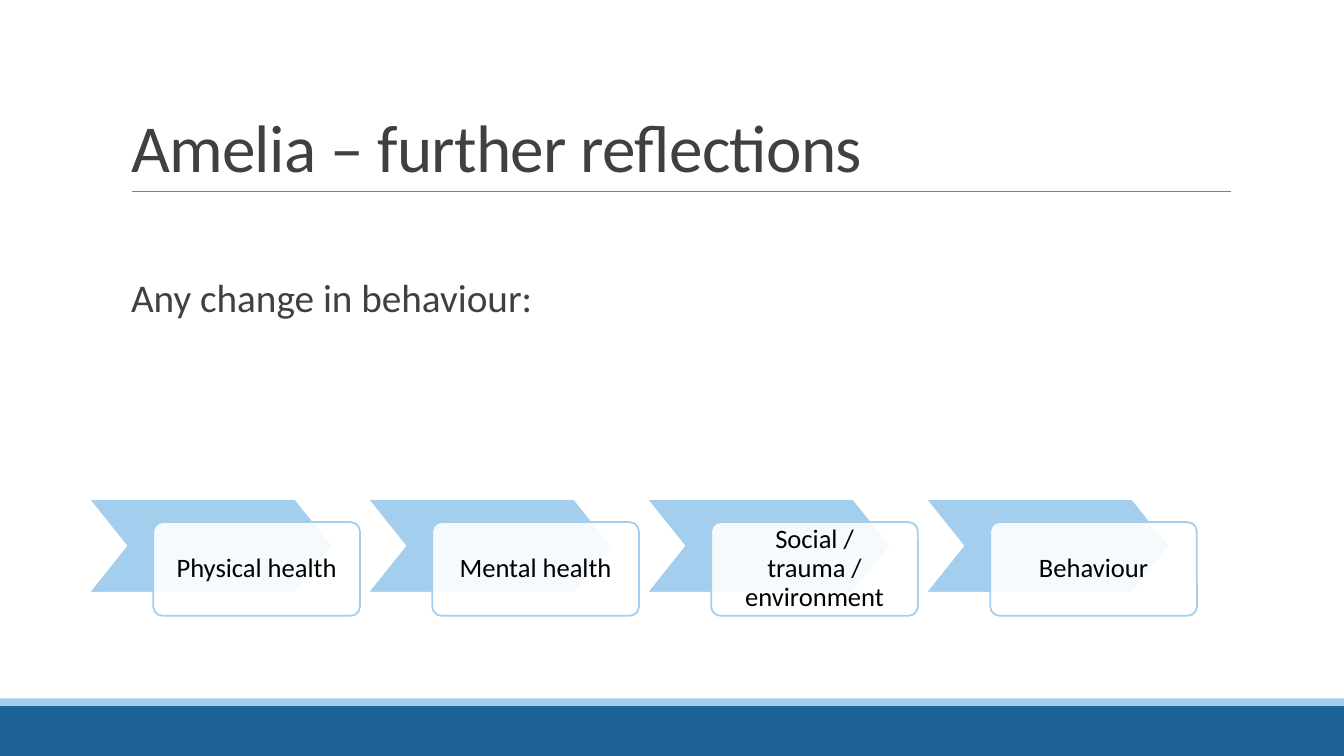
import pptx
import pptx.util
import pptx.oxml.ns
from lxml import etree
from pptx.dml.color import RGBColor
from pptx.enum.shapes import MSO_CONNECTOR, MSO_SHAPE
from pptx.enum.text import MSO_ANCHOR, MSO_AUTO_SIZE, PP_ALIGN

Inches = pptx.util.Inches
Pt = pptx.util.Pt
qn = pptx.oxml.ns.qn

COLOURS = {
    "text": "404040",
    "label": "000000",
    "rule": "808080",
    "white": "FFFFFF",
    "light": "A3CEED",
    "dark": "1C6294",
}
TOPICS = [
    "Physical health",
    "Mental health",
    "Social / trauma / environment",
    "Behaviour",
]


def colour(name):
    """Return the named colour of the palette."""
    return RGBColor.from_string(COLOURS[name])


def write_text(shape, text, size, ink="text", font="Calibri", align=PP_ALIGN.LEFT,
               anchor=MSO_ANCHOR.TOP, insets=(0.1, 0.05), line_spacing=0.9,
               space_after=0, indent=0, tracking=0):
    """Write one formatted paragraph into a shape."""
    frame = shape.text_frame
    frame.word_wrap = True
    frame.auto_size = MSO_AUTO_SIZE.NONE
    frame.vertical_anchor = anchor
    frame.margin_left = frame.margin_right = Inches(insets[0])
    frame.margin_top = frame.margin_bottom = Inches(insets[1])
    paragraph = frame.paragraphs[0]
    properties = paragraph._p.get_or_add_pPr()
    properties.set("marL", str(Inches(indent)))
    properties.set("indent", "0")
    etree.SubElement(properties, qn("a:buNone"))
    paragraph.alignment = align
    paragraph.line_spacing = line_spacing
    paragraph.space_before = Pt(0)
    paragraph.space_after = Pt(space_after)
    run = paragraph.add_run()
    run.text = text
    run.font.name = font
    run.font.size = Pt(size)
    run.font.color.rgb = colour(ink)
    if tracking:
        run._r.get_or_add_rPr().set("spc", str(int(tracking * 100)))


class SlideBuilder:
    """Holds the current slide and draws its elements in one style."""

    def __init__(self, presentation):
        """Add a title and content slide."""
        self.slide = presentation.slides.add_slide(presentation.slide_layouts[1])

    def placeholder(self, index, box, text, **style):
        """Move and fill a template placeholder."""
        shape = self.slide.placeholders[index]
        shape.left, shape.top, shape.width, shape.height = map(Inches, box)
        write_text(shape, text, **style)

    def shape(self, kind, box, fill, line=None, adjustment=None, opacity=None):
        """Draw a filled preset shape."""
        shape = self.slide.shapes.add_shape(kind, *map(Inches, box))
        shape.shadow.inherit = False
        shape.fill.solid()
        shape.fill.fore_color.rgb = colour(fill)
        if line:
            shape.line.color.rgb = colour(line)
            shape.line.width = Pt(1.25)
        else:
            shape.line.fill.background()
        if adjustment is not None:
            shape.adjustments[0] = adjustment
        if opacity is not None:
            solid = shape._element.spPr.find(qn("a:solidFill"))
            etree.SubElement(solid[0], qn("a:alpha")).set("val", str(opacity * 1000))
        return shape

    def rule(self, left, right, top):
        """Draw a thin horizontal line."""
        line = self.slide.shapes.add_connector(
            MSO_CONNECTOR.STRAIGHT, Inches(left), Inches(top), Inches(right), Inches(top))
        line.line.color.rgb = colour("rule")
        line.line.width = Pt(0.5)
        etree.SubElement(line._element.spPr, qn("a:effectLst"))

    def step(self, left, top, label):
        """Draw a chevron with its overlapping label card."""
        self.shape(MSO_SHAPE.CHEVRON, (left, top, 2.42, 0.93), "light", "white", 0.4)
        card = self.shape(MSO_SHAPE.ROUNDED_RECTANGLE, (left + 0.64, top + 0.23, 2.05, 0.93),
                          "white", "light", 0.1, opacity=90)
        write_text(card, label, 19, "label", align=PP_ALIGN.CENTER,
                   anchor=MSO_ANCHOR.MIDDLE, insets=(0.15, 0))


def main():
    """Build and save the slide."""
    presentation = pptx.Presentation()
    presentation.slide_width = Inches(13.33)
    presentation.slide_height = Inches(7.5)
    builder = SlideBuilder(presentation)
    builder.shape(MSO_SHAPE.RECTANGLE, (0, 7, 13.33, 0.5), "dark")
    builder.shape(MSO_SHAPE.RECTANGLE, (0, 6.93, 13.33, 0.07), "light")
    builder.rule(1.31, 12.21, 1.9)
    builder.placeholder(0, (1.2, 0.31, 11, 1.59), "Amelia – further reflections", size=48,
                        anchor=MSO_ANCHOR.BOTTOM, line_spacing=0.85, tracking=-0.5)
    builder.placeholder(1, (1.2, 2.71, 10.67, 3.71), "Any change in behaviour:", size=28,
                        insets=(0, 0.05), space_after=4, indent=0.1)
    for index, topic in enumerate(TOPICS):
        builder.step(0.88 + 2.767 * index, 4.95, topic)
    presentation.save("out.pptx")


if __name__ == "__main__":
    main()
